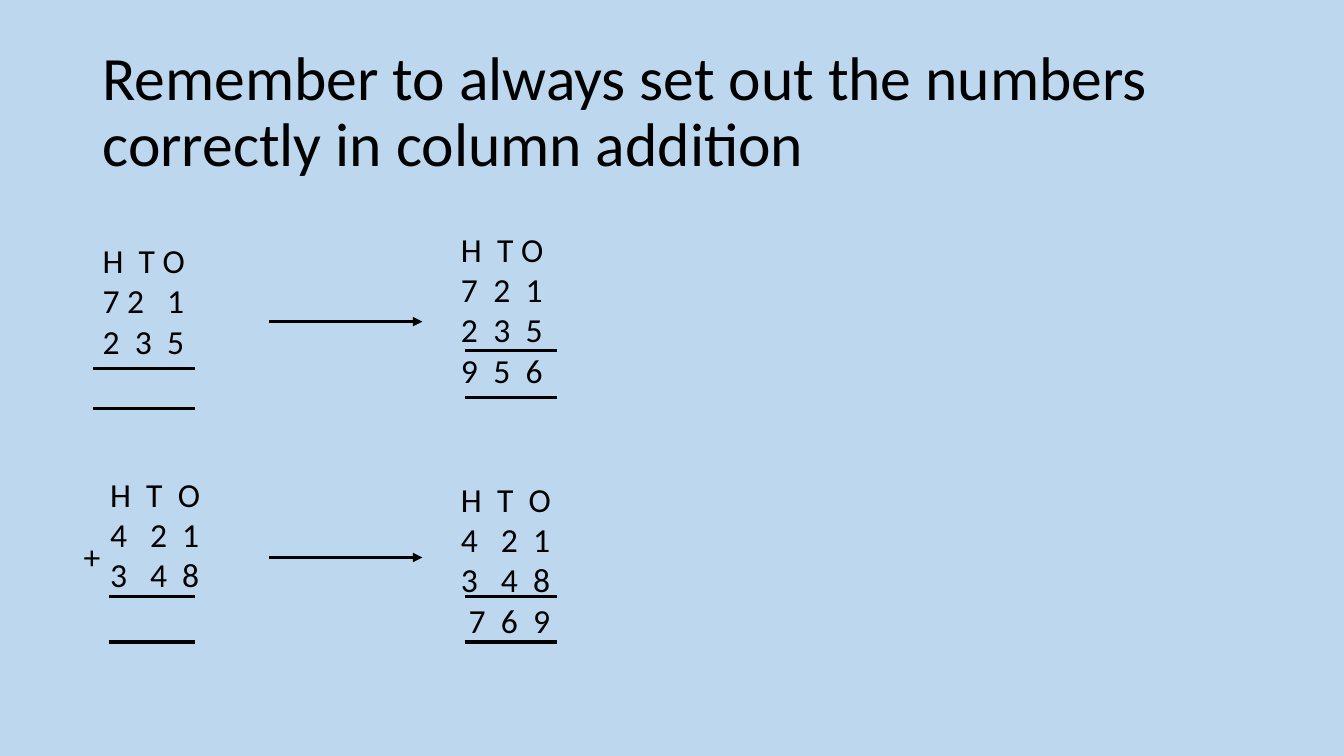
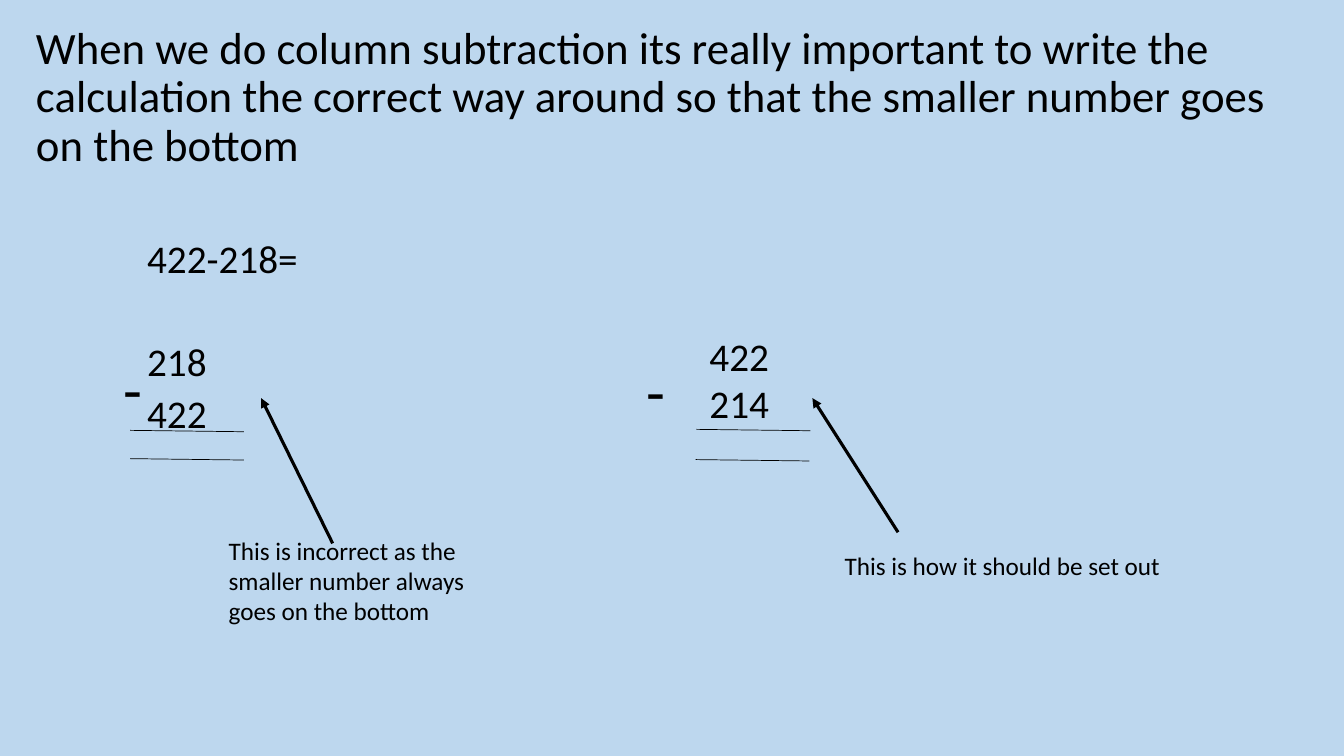
from lxml import etree
from pptx import Presentation
from pptx.dml.color import RGBColor
from pptx.enum.shapes import MSO_CONNECTOR
from pptx.enum.text import MSO_ANCHOR, MSO_AUTO_SIZE, PP_ALIGN
from pptx.oxml.ns import qn
from pptx.util import Pt

COLOURS = {"sky": "BDD7EE", "ink": "000000"}
FONT = "Calibri"
STRAIGHT = MSO_CONNECTOR.STRAIGHT
LEFT = PP_ALIGN.LEFT
MIDDLE = MSO_ANCHOR.MIDDLE
NO_AUTOFIT = MSO_AUTO_SIZE.NONE
TITLE_ONLY, TITLE_AND_CONTENT = 5, 1
HEAVY, THIN = 2.25, 0.5


def write(shape, frame, lines, size):
    """Place a text shape and fill it with one paragraph per line."""
    shape.left, shape.top, shape.width, shape.height = map(Pt, frame)
    text_frame = shape.text_frame
    text_frame.word_wrap = True
    text_frame.auto_size = NO_AUTOFIT
    text_frame.text = "\n".join(lines)
    for para in text_frame.paragraphs:
        para.alignment = LEFT
        for span in para.runs:
            span.font.name = FONT
            span.font.size = Pt(size)
            span.font.color.rgb = RGBColor.from_string(COLOURS["ink"])
    return text_frame


def draw_line(slide, ends, weight, arrow=False):
    connector = slide.shapes.add_connector(STRAIGHT, *map(Pt, ends))
    connector.line.width = Pt(weight)
    connector.line.color.rgb = RGBColor.from_string(COLOURS["ink"])
    if arrow:
        etree.SubElement(connector.line._get_or_add_ln(), qn("a:tailEnd"), type="triangle")
    etree.SubElement(connector._element.spPr, qn("a:effectLst"))


deck = Presentation()
deck.slide_width, deck.slide_height = Pt(960), Pt(540)
background = deck.slide_master.background.fill
background.solid()
background.fore_color.rgb = RGBColor.from_string(COLOURS["sky"])

titles = [
    (TITLE_ONLY, (66, 28.8, 828, 104.4), 44,
     "Remember to always set out the numbers correctly in column addition"),
    (TITLE_AND_CONTENT, (18.5, 18, 923, 104.4), 32,
     "When we do column subtraction its really important to write the calculation "
     "the correct way around so that the smaller number goes on the bottom"),
]
for layout, frame, size, title in titles:
    slide = deck.slides.add_slide(deck.slide_layouts[layout])
    text_frame = write(slide.shapes.title, frame, [title], size)
    text_frame.vertical_anchor = MIDDLE
    text_frame.paragraphs[0].line_spacing = 0.9
addition, subtraction = deck.slides

# Column addition: each row has its characters and the tab stops they stand on
EVEN = (5.4, 28.5, 51.5)
WIDE = (5.4, 33.9, 56.9)
HEADING = ("HTO", (5.4, 31.2, 53.8))
CLOSE_HEADING = ("HTO", (5.4, 31.2, 48.3))
WIDE_SUM = [HEADING, ("421", WIDE), ("348", WIDE)]
sums = [
    (60.8, 167.8, [CLOSE_HEADING, ("721", (5.4, 23, 51.5)), ("235", EVEN)]),
    (66.2, 334.8, WIDE_SUM),
    (316.8, 159.8, [CLOSE_HEADING, ("721", EVEN), ("235", EVEN), ("956", EVEN)]),
    (316.8, 338.4, WIDE_SUM + [("769", (10.8, 33.9, 56.9))]),
]
for left, top, rows in sums:
    box = addition.shapes.add_textbox(0, 0, 0, 0)
    lines = ["\t" + "\t".join(characters) for characters, stops in rows]
    text_frame = write(box, (left, top, 130, 124), lines, 24)
    for para, (characters, stops) in zip(text_frame.paragraphs, rows):
        tab_list = etree.SubElement(para._p.get_or_add_pPr(), qn("a:tabLst"))
        for stop in stops:
            etree.SubElement(tab_list, qn("a:tab"), pos=str(int(Pt(stop))), algn="l")
write(addition.shapes.add_textbox(0, 0, 0, 0), (52.6, 379.4, 40, 36), ["+"], 24)

answer_rules = [
    (66.2, 139, (263.5, 291.6)),
    (77.8, 139, (426.2, 458.6)),
    (331.9, 398.2, (250.6, 283.7)),
    (331.9, 398.2, (426.2, 458.6)),
]
for start, end, heights in answer_rules:
    for y in heights:
        draw_line(addition, (start, y, end, y), HEAVY)
for y in (229.7, 398.2):
    draw_line(addition, (192.2, y, 301.7, y), HEAVY, arrow=True)

# Column subtraction
text_frame = write(subtraction.placeholders[1], (97.9, 169.9, 152.6, 151.2),
                   ["422-218=", "218", "422"], 28)
for para, gap in zip(text_frame.paragraphs, (10, 47.3, 10)):
    para.line_spacing = 0.8
    para.space_before = Pt(gap)
    properties = para._p.get_or_add_pPr()
    properties.set("marL", "0")
    properties.set("indent", "0")
    etree.SubElement(properties, qn("a:buNone"))

labels = [
    ((81.4, 247, 63.4, 60.5), ["-"], 44),
    ((455, 248.4, 63.4, 60.5), ["-"], 44),
    ((499.7, 234, 193.7, 74.9), ["422", "214"], 28),
    ((156.2, 378.7, 188.6, 72.7),
     ["This is incorrect as the smaller number always goes on the bottom"], 18),
    ((596.2, 389.5, 241.2, 28.8), ["This is how it should be set out"], 18),
]
for frame, lines, size in labels:
    write(subtraction.shapes.add_textbox(0, 0, 0, 0), frame, lines, size)

for left, top in ((92.9, 307.4), (92.9, 327.6), (497.5, 306.7), (496.8, 328.3)):
    draw_line(subtraction, (left, top, left + 81.4, top + 1), THIN)
for ends in ((237.6, 388.1, 186.5, 284.4), (641.5, 380.2, 580.3, 284.4)):
    draw_line(subtraction, ends, HEAVY, arrow=True)

deck.save("out.pptx")
